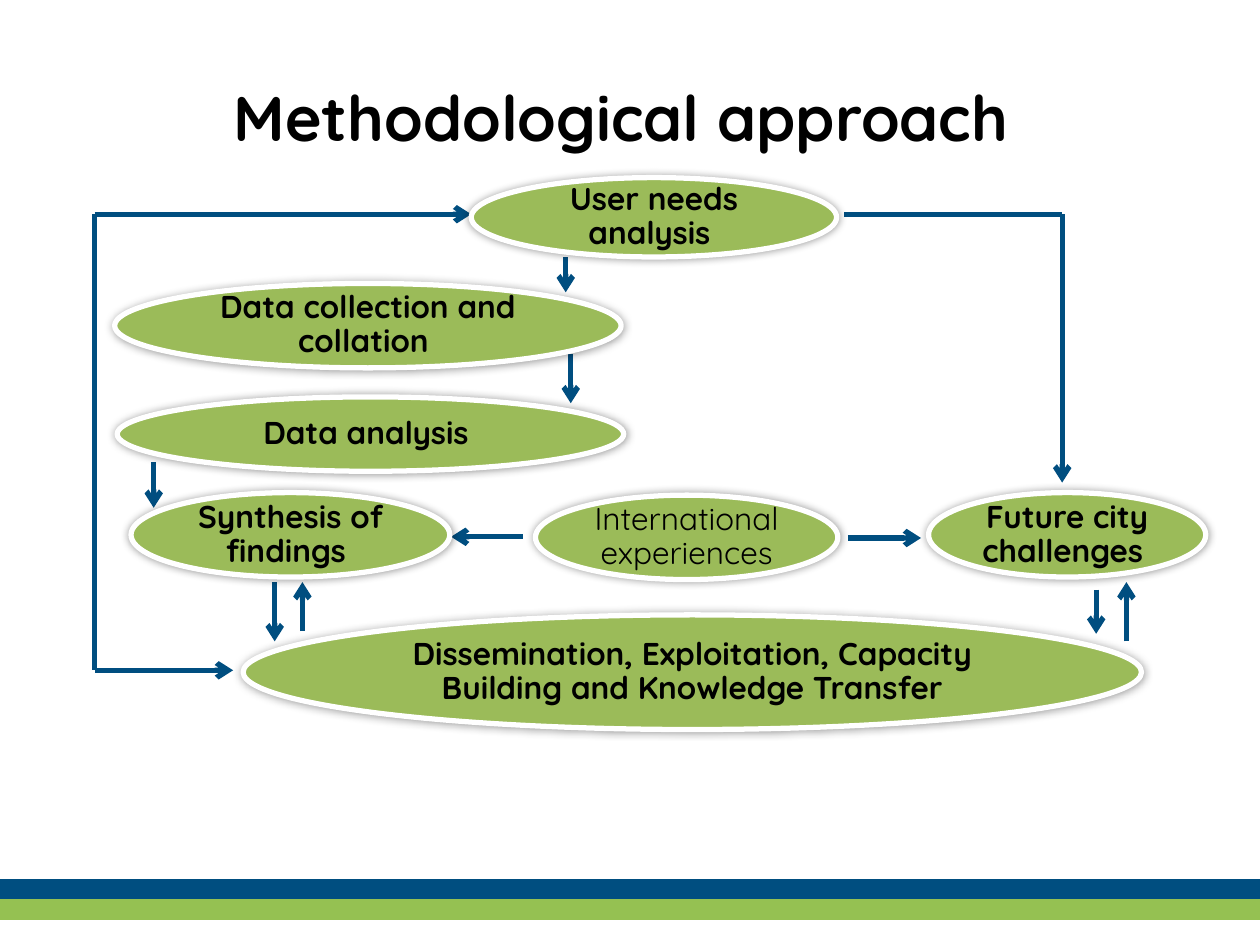
from dataclasses import dataclass

from lxml import etree
from pptx import Presentation
from pptx.dml.color import RGBColor
from pptx.enum.shapes import MSO_CONNECTOR, MSO_SHAPE
from pptx.enum.text import MSO_ANCHOR, PP_ALIGN
from pptx.oxml.ns import qn
from pptx.util import Inches, Pt

OVAL = MSO_SHAPE.OVAL
STRAIGHT = MSO_CONNECTOR.STRAIGHT
MIDDLE = MSO_ANCHOR.MIDDLE
CENTER = PP_ALIGN.CENTER

FONT = "Quicksand"
BLACK, WHITE = "000000", "FFFFFF"
BLUE, GREEN, OVAL_GREEN = "004E80", "95C152", "9BBB59"


@dataclass
class Stage:
    text: str
    left: float
    top: float
    width: float
    height: float
    inset: float = 0.07
    bold: bool = True


@dataclass
class Link:
    x1: float
    y1: float
    x2: float
    y2: float
    arrow: bool = True


def colour(value: str) -> RGBColor:
    return RGBColor.from_string(value)


def add_text(frame, text: str, size: float, bold: bool):
    frame.word_wrap = True
    frame.vertical_anchor = MIDDLE
    para = frame.paragraphs[0]
    para.alignment = CENTER
    span = para.add_run()
    span.text = text
    span.font.name = FONT
    span.font.size = Pt(size)
    span.font.bold = bold
    span.font.color.rgb = colour(BLACK)
    return para


def add_glow_shadow(shape) -> None:
    effects = etree.SubElement(shape._element.spPr, qn("a:effectLst"))
    shadow = etree.SubElement(effects, qn("a:outerShdw"), blurRad=str(Pt(5)),
                              dist="0", dir="0", rotWithShape="0")
    black = etree.SubElement(shadow, qn("a:srgbClr"), val=BLACK)
    etree.SubElement(black, qn("a:alpha"), val="40000")


def add_stage(page, stage: Stage) -> None:
    oval = page.shapes.add_shape(OVAL, Inches(stage.left), Inches(stage.top),
                                 Inches(stage.width), Inches(stage.height))
    oval.fill.solid()
    oval.fill.fore_color.rgb = colour(OVAL_GREEN)
    oval.line.color.rgb = colour(WHITE)
    oval.line.width = Pt(3)
    add_glow_shadow(oval)
    frame = oval.text_frame
    frame.margin_left = frame.margin_right = Inches(stage.inset)
    frame.margin_top = frame.margin_bottom = Inches(stage.inset)
    para = add_text(frame, stage.text, 18, stage.bold)
    para.line_spacing = 0.9
    para.space_after = Pt(6.3)


def add_link(page, link: Link, hue: str = BLUE, width: float = 3) -> None:
    line = page.shapes.add_connector(STRAIGHT, Inches(link.x1), Inches(link.y1),
                                     Inches(link.x2), Inches(link.y2))
    line.line.color.rgb = colour(hue)
    line.line.width = Pt(width)
    if link.arrow:
        etree.SubElement(line.line._get_or_add_ln(), qn("a:tailEnd"), type="arrow")
    etree.SubElement(line._element.spPr, qn("a:effectLst"))


# Key positions of the loop on the left and the branch on the right
LOOP_X, BRANCH_X = 0.75, 8.43
TOP_Y, BOTTOM_Y = 1.7, 5.32

OUTCOMES = [
    Stage("Future city challenges ", 7.37, 3.91, 2.2, 0.67),
    Stage("Dissemination, Exploitation, Capacity Building and Knowledge Transfer",
          1.93, 4.88, 7.13, 0.91, 0.06),
]
LINKS = [
    Link(BRANCH_X, TOP_Y, BRANCH_X, 3.83),
    Link(LOOP_X, TOP_Y, 3.74, TOP_Y),
    Link(LOOP_X, BOTTOM_Y, 1.85, BOTTOM_Y),
    Link(6.73, 4.27, 7.31, 4.27),
    Link(4.15, 4.26, 3.58, 4.26),
    Link(4.49, 2.04, 4.49, 2.32),
    Link(4.53, 2.81, 4.53, 3.2),
    Link(1.22, 3.67, 1.22, 4.03),
    Link(2.18, 4.62, 2.18, 5.09),
    Link(8.7, 4.68, 8.7, 5.03),
    Link(2.4, 5.01, 2.4, 4.62),
    Link(8.94, 5.09, 8.94, 4.62),
    Link(LOOP_X, TOP_Y, LOOP_X, BOTTOM_Y, arrow=False),
    Link(6.7, TOP_Y, BRANCH_X, TOP_Y, arrow=False),
]
ACTIVITIES = [
    Stage("International experiences", 4.25, 3.93, 2.4, 0.67, bold=False),
    Stage("User needs analysis ", 3.74, 1.41, 2.9, 0.63, 0.06),
    Stage("Data collection and collation ", 0.91, 2.25, 4.02, 0.67, 0.05),
    Stage("Data analysis ", 0.93, 3.15, 4.02, 0.59),
    Stage("Synthesis of findings ", 1.04, 3.91, 2.53, 0.67),
]


def main() -> None:
    deck = Presentation()
    deck.slide_width, deck.slide_height = Inches(10), Inches(7.5)
    page = deck.slides.add_slide(deck.slide_layouts[6])

    # Footer bands
    for y, hue in ((7.06, BLUE), (7.22, GREEN)):
        add_link(page, Link(0, y, 10, y, arrow=False), hue, 12)

    # Title
    box = page.shapes.add_textbox(Inches(0.5), Inches(0.3), Inches(9), Inches(1.25))
    add_text(box.text_frame, "Methodological approach ", 36, True)

    # Flow diagram: the links lie above the outcomes and below the activities
    for stage in OUTCOMES:
        add_stage(page, stage)
    for link in LINKS:
        add_link(page, link)
    for stage in ACTIVITIES:
        add_stage(page, stage)

    deck.save("out.pptx")


if __name__ == "__main__":
    main()
